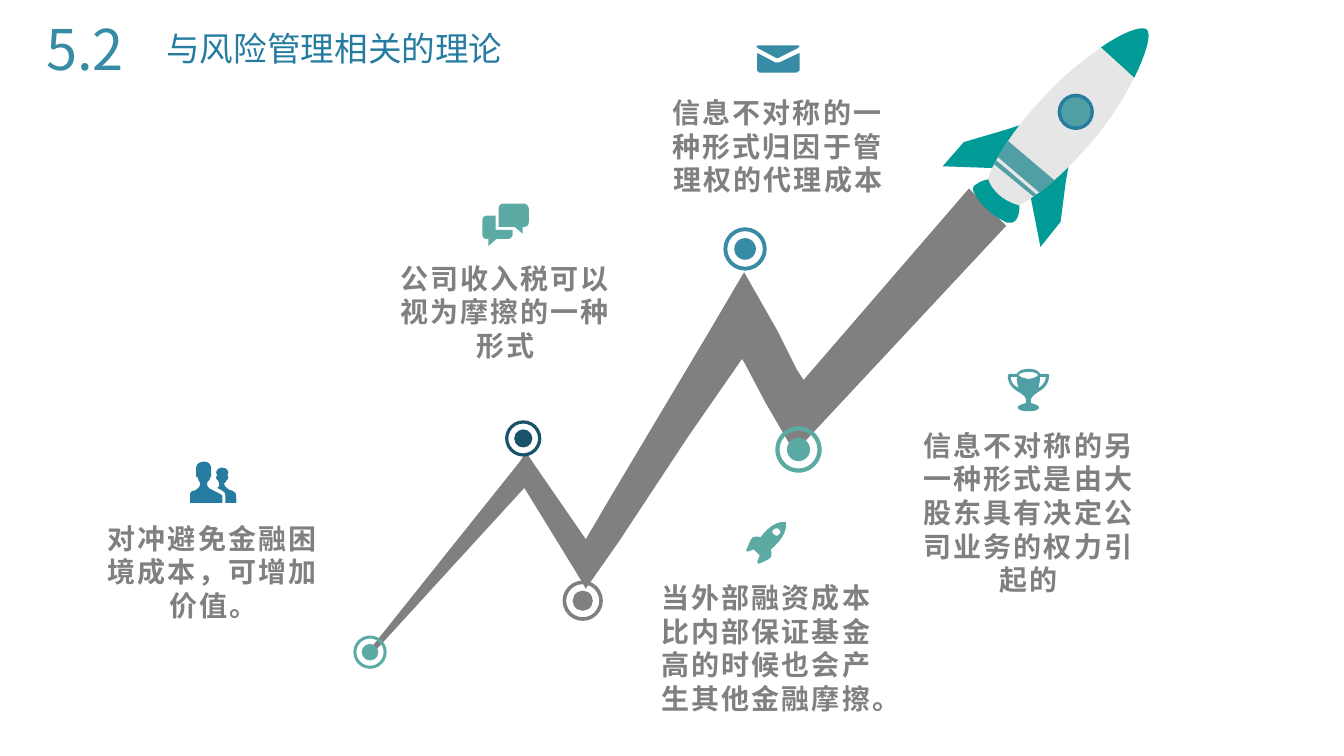
from dataclasses import dataclass

from pptx import Presentation
from pptx.dml.color import RGBColor
from pptx.enum.shapes import MSO_SHAPE
from pptx.enum.text import MSO_ANCHOR, MSO_AUTO_SIZE, PP_ALIGN
from pptx.oxml.ns import qn
from pptx.util import Inches, Pt


@dataclass(frozen=True)
class Theme:
    font: str = "Noto Sans CJK SC"
    gray: str = "808080"
    light: str = "E7E6E6"
    green: str = "009B97"
    teal: str = "509FA4"
    mint: str = "5BAAA4"
    sky: str = "388BA5"
    blue: str = "267CA0"
    navy: str = "195269"
    body: int = 20
    title: int = 24
    number: int = 40
    leading: float = 1.2


THEME = Theme()
UNIT = Inches(0.01)  # outlines below are drawn on a grid of 0.01 inch

ROAD = [[(594, 0), (430, 190), (423, 179), (404, 141), (371, 83), (334, 146),
         (241, 302), (214, 348), (163, 274), (155, 262), (147, 273), (0, 457),
         (0, 461), (3, 461), (153, 297), (204, 380), (214, 397), (226, 380),
         (247, 350), (307, 259), (317, 244), (369, 169), (372, 174), (392, 212),
         (421, 262), (631, 37)]]

ROCKET = [
    (THEME.green, [(57, 142), (0, 140), (21, 116), (62, 104), (77, 99), (62, 142)]),
    (THEME.green, [(85, 159), (125, 139), (122, 156), (117, 195), (97, 220)]),
    (THEME.light, [(56, 185), (52, 185, 48, 183, 46, 181), (43, 177, 41, 172, 42, 165),
                   (43, 157, 46, 147, 52, 136), (62, 118, 76, 97, 96, 76),
                   (127, 40, 167, 13, 190, 5), (194, 4, 197, 3, 199, 3), (202, 4),
                   (203, 5, 205, 8, 203, 17), (198, 40, 178, 82, 144, 120),
                   (125, 142, 106, 159, 90, 170), (79, 178, 70, 182, 63, 184)]),
    (THEME.teal, [(65, 115), (65, 115, 56, 127, 55, 131), (96, 166),
                  (96, 166, 102, 162, 111, 154)]),
    (THEME.teal, [(53, 134), (51, 138), (90, 170), (93, 168)]),
    (THEME.green, [(190, 52), (201, 30, 208, 8, 202, 4), (197, 0, 177, 8, 157, 22)]),
    (THEME.green, [(67, 196), (64, 196), (57, 193, 43, 184, 36, 174), (31, 166),
                   (28, 160, 33, 158, 35, 157), (37, 155, 41, 154, 45, 153), (46, 155),
                   (48, 161, 57, 174, 76, 179), (76, 183), (75, 192, 72, 196, 67, 196)]),
]

CHAT = [
    [(13, 26), (13, 12), (5, 12), (1, 12, 0, 14, 0, 17), (0, 30), (0, 33, 1, 35, 5, 35),
     (6, 35), (6, 42), (14, 35), (25, 35), (28, 35, 30, 33, 30, 30), (30, 26)],
    [(41, 0), (20, 0), (18, 0, 16, 3, 16, 5), (16, 23), (32, 23), (40, 30), (40, 23),
     (41, 23), (44, 23, 46, 22, 46, 18), (46, 5), (46, 3, 44, 0, 41, 0)],
]
MAIL = [
    [(0, 1), (2, 3), (19, 12), (20, 13, 22, 13, 23, 12), (41, 3), (43, 1), (42, 0), (2, 0)],
    [(42, 8), (23, 17), (22, 17, 20, 17, 19, 17), (2, 8), (1, 8), (1, 25), (3, 27),
     (40, 27), (43, 25), (43, 8)],
]
PEOPLE = [
    [(46, 41), (46, 41, 46, 32, 45, 31), (44, 30, 43, 29, 39, 28), (36, 26, 34, 24, 34, 22),
     (34, 20, 36, 21, 36, 19), (36, 17, 38, 19, 38, 15), (37, 14), (38, 11),
     (38, 10, 37, 6, 32, 6), (27, 6, 26, 10, 26, 11), (27, 14), (26, 15),
     (26, 19, 27, 17, 28, 19), (28, 21, 29, 20, 29, 22), (29, 24, 29, 25, 27, 26),
     (34, 30, 35, 30, 35, 34), (35, 41)],
    [(24, 29), (19, 27, 17, 25, 17, 22), (17, 19, 19, 20, 20, 16), (20, 15, 21, 16, 21, 13),
     (21, 7), (21, 5, 20, 0, 14, 0), (7, 0, 6, 5, 6, 7), (6, 13), (6, 16, 7, 15, 8, 16),
     (8, 20, 10, 19, 10, 22), (10, 25, 8, 27, 4, 29), (2, 29, 0, 30, 0, 33), (0, 41),
     (32, 41), (32, 34), (32, 33, 28, 31, 24, 29)],
]
LAUNCH = [
    [(25, 29), (25, 29, 42, 16, 40, 3), (40, 2), (26, 0, 15, 17, 15, 17),
     (5, 15, 6, 18, 1, 29), (0, 31, 1, 31, 3, 31), (8, 29), (14, 35),
     (14, 35, 13, 38, 12, 40), (11, 42, 12, 44, 14, 43), (25, 38, 27, 38, 25, 29)],
    [(28, 14), (26, 13, 26, 11, 28, 9), (30, 8, 32, 8, 33, 9), (35, 11, 35, 13, 33, 14),
     (32, 16, 30, 16, 28, 14)],
]
TROPHY = [
    [(23, 31), (23, 28, 26, 26, 30, 23), (35, 20, 41, 16, 41, 6), (40, 5), (32, 5),
     (31, 2, 27, 0, 21, 0), (14, 0, 11, 2, 9, 5), (2, 5), (0, 6), (0, 16, 6, 20, 11, 23),
     (16, 26, 18, 28, 18, 31), (18, 34), (13, 35, 10, 37, 10, 38), (10, 41, 15, 42, 21, 42),
     (26, 42, 31, 41, 31, 38), (31, 37, 28, 35, 23, 34)],
    [(30, 19), (31, 17, 32, 13, 32, 8), (38, 8), (37, 14, 34, 17, 30, 19)],
    [(21, 3), (27, 3, 30, 5, 30, 6), (30, 7, 27, 9, 21, 10), (14, 9, 11, 7, 11, 6),
     (11, 5, 14, 3, 21, 3)],
    [(3, 8), (9, 8), (9, 13, 10, 17, 11, 19), (7, 17, 3, 14, 3, 8)],
]

# centre x, centre y, diameter, colour
NODES = [
    (3.67, 6.47, 0.33, THEME.mint),
    (5.19, 4.35, 0.36, THEME.navy),
    (5.78, 5.96, 0.4, THEME.gray),
    (7.39, 2.47, 0.43, THEME.sky),
    (7.92, 4.46, 0.46, THEME.mint),
]

# left, icon top, text top, text height, icon, icon width, colour, text
POINTS = [
    (3.84, 2.02, 2.54, 1.11, CHAT, 0.46, THEME.mint, "公司收入税可以视为摩擦的一种形式"),
    (6.54, 0.45, 0.9, 1.11, MAIL, 0.43, THEME.sky,
     "信息不对称的一种形式归因于管理权的代理成本"),
    (0.94, 4.58, 5.12, 1.11, PEOPLE, 0.46, THEME.blue, "对冲避免金融困境成本，可增加价值。"),
    (6.43, 5.16, 5.71, 1.45, LAUNCH, 0.42, THEME.mint,
     "当外部融资成本比内部保证基金高的时候也会产生其他金融摩擦。"),
    (9.03, 3.66, 4.2, 1.78, TROPHY, 0.42, THEME.teal,
     "信息不对称的另一种形式是由大股东具有决定公司业务的权力引起的"),
]
POINT_WIDTH = 2.35


def paint(sp, color):
    sp.shadow.inherit = False
    sp.fill.solid()
    sp.fill.fore_color.rgb = RGBColor.from_string(color)
    sp.line.fill.background()


def trace(contour, steps=8):
    """Turn points and cubic curves (six numbers) into EMU vertices."""
    vertices = []
    for part in contour:
        if len(part) == 2:
            vertices.append(part)
            continue
        curve = (vertices[-1], part[:2], part[2:4], part[4:])
        for i in range(1, steps + 1):
            t = i / steps
            weights = ((1 - t) ** 3, 3 * t * (1 - t) ** 2, 3 * t * t * (1 - t), t ** 3)
            vertices.append(tuple(sum(w * p[k] for w, p in zip(weights, curve)) for k in (0, 1)))
    return [(x * UNIT, y * UNIT) for x, y in vertices]


def add_outline(shapes, left, top, contours, color):
    first, *others = [trace(contour) for contour in contours]
    builder = shapes.build_freeform(*first[0])
    builder.add_line_segments(first[1:])
    for vertices in others:
        builder.move_to(*vertices[0])
        builder.add_line_segments(vertices[1:])
    paint(builder.convert_to_shape(Inches(left), Inches(top)), color)


def add_round(shapes, x, y, size, color, kind=MSO_SHAPE.OVAL):
    """Add a round shape centred on x, y."""
    sp = shapes.add_shape(kind, Inches(x - size / 2), Inches(y - size / 2),
                          Inches(size), Inches(size))
    paint(sp, color)
    return sp


def write(sp, text, size, color, align, bold=False, spacing=0, wrap=True):
    tf = sp.text_frame
    tf.text = text
    tf.word_wrap = wrap
    tf.auto_size = MSO_AUTO_SIZE.NONE
    tf.vertical_anchor = MSO_ANCHOR.TOP
    p = tf.paragraphs[0]
    p.alignment = align
    p.line_spacing = Pt(size * THEME.leading)
    r = p.runs[0]
    r.font.size, r.font.bold, r.font.name = Pt(size), bold, THEME.font
    r.font.color.rgb = RGBColor.from_string(color)
    props = r.font._element
    props.set("spc", str(int(spacing * 100)))
    props.makeelement(qn("a:ea"), {})
    ea = props.makeelement(qn("a:ea"), {"typeface": THEME.font})
    props.find(qn("a:latin")).addnext(ea)


def add_heading(slide, left, top):
    title = slide.shapes.title
    title.left, title.top = Inches(left + 1.19), Inches(top + 0.13)
    title.width, title.height = Inches(4.75), Inches(0.5)
    write(title, "与风险管理相关的理论", THEME.title, THEME.blue, PP_ALIGN.JUSTIFY)
    number = slide.shapes.add_textbox(Inches(left), Inches(top), Inches(1), Inches(0.77))
    write(number, "5.2", THEME.number, THEME.sky, PP_ALIGN.LEFT, wrap=False)


def add_rocket(shapes, left, top):
    for color, contour in ROCKET:
        add_outline(shapes, left, top, [contour], color)
    for size, color in ((0.36, THEME.blue), (0.29, THEME.teal)):
        add_round(shapes, left + 1.32, top + 0.86, size, color)


def add_node(shapes, x, y, size, color):
    add_round(shapes, x, y, size / 2, color)
    ring = add_round(shapes, x, y, size, color, MSO_SHAPE.DONUT)
    ring.adjustments[0] = 0.09


def add_point(shapes, left, icon_top, top, height, icon, icon_width, color, text):
    add_outline(shapes, left + (POINT_WIDTH - icon_width) / 2, icon_top, icon, color)
    sp = shapes.add_textbox(Inches(left), Inches(top), Inches(POINT_WIDTH), Inches(height))
    write(sp, text, THEME.body, THEME.gray, PP_ALIGN.CENTER, bold=True, spacing=1.5)


def main():
    prs = Presentation()
    prs.slide_width, prs.slide_height = Inches(13.33), Inches(7.5)
    slide = prs.slides.add_slide(prs.slide_layouts[5])
    add_heading(slide, 0.36, 0.1)
    add_outline(slide.shapes, 3.67, 1.87, ROAD, THEME.gray)
    add_rocket(slide.shapes, 9.35, 0.25)
    for node in NODES:
        add_node(slide.shapes, *node)
    for point in POINTS:
        add_point(slide.shapes, *point)
    prs.save("out.pptx")


if __name__ == "__main__":
    main()
